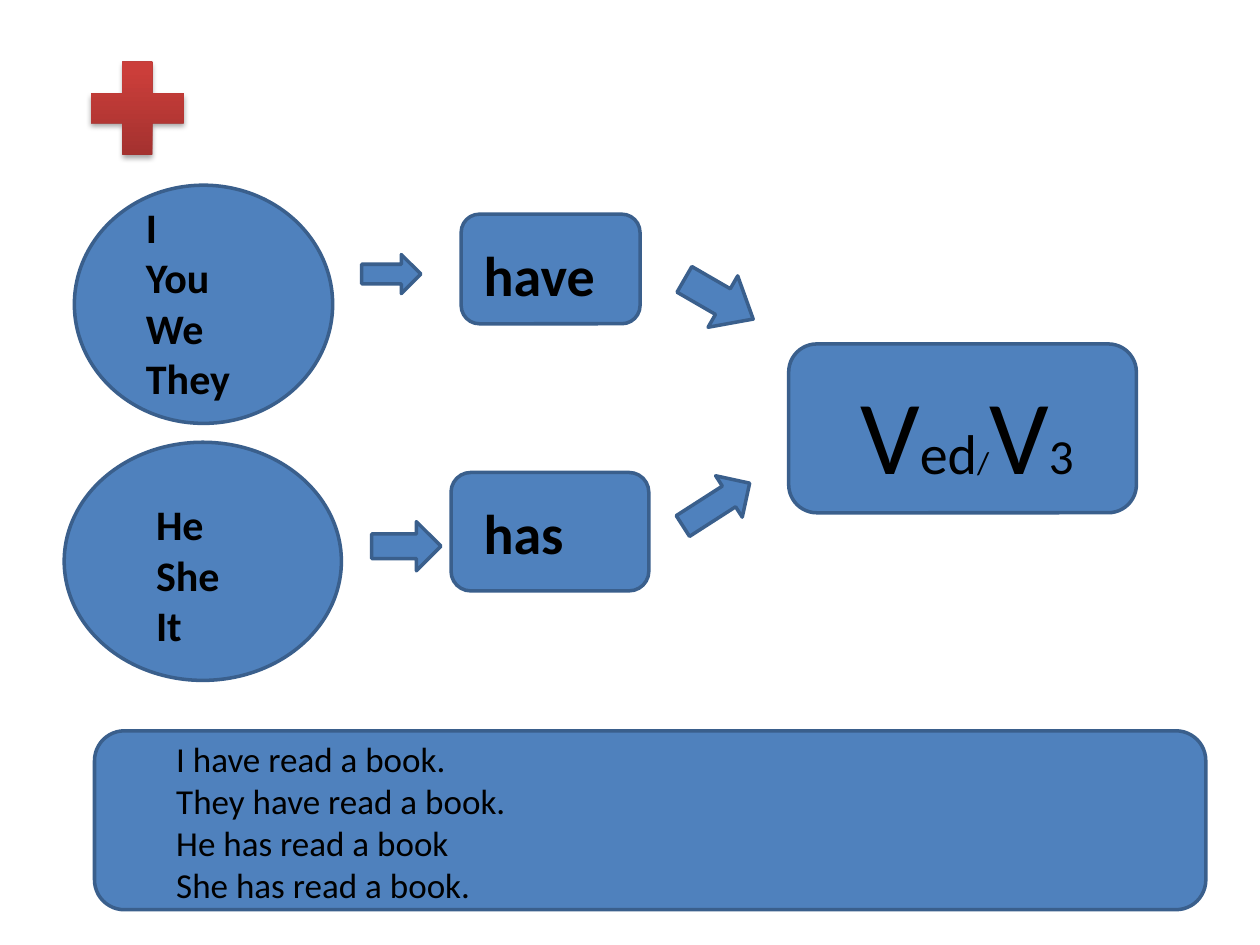
"""Build a slide that shows how the present perfect is formed."""
from dataclasses import dataclass

from lxml import etree
from pptx import Presentation
from pptx.dml.color import RGBColor
from pptx.enum.shapes import MSO_SHAPE
from pptx.util import Inches, Pt

PLUS = MSO_SHAPE.MATH_PLUS
OVAL = MSO_SHAPE.OVAL
ARROW = MSO_SHAPE.RIGHT_ARROW
ROUND = MSO_SHAPE.ROUNDED_RECTANGLE

BLUE = RGBColor(0x4F, 0x81, 0xBD)
DARK_BLUE = RGBColor(0x3A, 0x5F, 0x8C)
BLACK = RGBColor(0, 0, 0)
FONT = "Calibri"

NS = 'xmlns:a="http://schemas.openxmlformats.org/drawingml/2006/main"'
RED_GRADIENT = f"""<a:gradFill {NS} rotWithShape="1"><a:gsLst>
<a:gs pos="0"><a:srgbClr val="9C2F2D"/></a:gs>
<a:gs pos="80000"><a:srgbClr val="CB3E3A"/></a:gs>
<a:gs pos="100000"><a:srgbClr val="CE3B37"/></a:gs>
</a:gsLst><a:lin ang="16200000" scaled="0"/></a:gradFill>"""
SOFT_SHADOW = f"""<a:effectLst {NS}>
<a:outerShdw blurRad="40000" dist="23000" dir="5400000" rotWithShape="0">
<a:srgbClr val="000000"><a:alpha val="35000"/></a:srgbClr>
</a:outerShdw></a:effectLst>"""


@dataclass
class Block:
    kind: MSO_SHAPE
    box: tuple[float, float, float, float]
    rotation: float = 0
    adjustments: tuple[float, ...] = ()


@dataclass
class Label:
    box: tuple[float, float, float, float]
    lines: list[str]
    size: int
    bold: bool = False


BLOCKS = [
    Block(OVAL, (0.59, 1.47, 2.05, 1.89)),
    Block(OVAL, (0.51, 3.51, 2.2, 1.89)),
    Block(ARROW, (2.87, 2.02, 0.47, 0.31)),
    Block(ARROW, (2.95, 4.14, 0.55, 0.39)),
    Block(ROUND, (3.66, 1.7, 1.42, 0.87)),
    Block(ROUND, (3.58, 3.75, 1.57, 0.94)),
    Block(ARROW, (5.39, 2.14, 0.63, 0.47), 30, (0.5, 0.59)),
    Block(ARROW, (5.37, 3.81, 0.63, 0.39), 327.3),
    Block(ROUND, (6.26, 2.73, 2.76, 1.34)),
    Block(ROUND, (0.75, 5.8, 8.82, 1.42)),
]
LABELS = [
    Label((1.06, 1.55, 1.18, 1.72), ["I", "You", "We", "They"], 24, True),
    Label((1.14, 3.91, 1.1, 1.31), ["He", "She", "It"], 24, True),
    Label((3.74, 1.86, 1.1, 0.64), ["have"], 32, True),
    Label((3.74, 3.91, 1.1, 0.64), ["has"], 32, True),
    Label((1.3, 5.8, 7.09, 1.45),
          ["I have read a book.", "They have read a book.",
           "He has read a book", "She has read a book."], 20),
]
FORMULA_BOX = (6.73, 2.88, 2.2, 1.11)
FORMULA = [("V", 60), ("ed", 32), ("/", 18), ("V", 60), ("3", 28), (" ", 18)]


def add_plus(s) -> None:
    sp = s.shapes.add_shape(PLUS, *map(Inches, (0.59, 0.36, 1, 1)))
    sp.line.fill.background()
    pr = sp._element.spPr
    pr.insert(2, etree.fromstring(RED_GRADIENT))
    pr.append(etree.fromstring(SOFT_SHADOW))


def add_block(s, block: Block) -> None:
    sp = s.shapes.add_shape(block.kind, *map(Inches, block.box))
    sp.shadow.inherit = False
    sp.rotation = block.rotation
    for i, value in enumerate(block.adjustments):
        sp.adjustments[i] = value
    sp.fill.solid()
    sp.fill.fore_color.rgb = BLUE
    sp.line.color.rgb = DARK_BLUE
    sp.line.width = Pt(2)


def add_text(s, box: tuple[float, ...], lines: list[list[tuple[str, int]]],
             *, bold: bool = False) -> None:
    tf = s.shapes.add_textbox(*map(Inches, box)).text_frame
    tf.word_wrap = True
    for i, runs in enumerate(lines):
        p = tf.add_paragraph() if i else tf.paragraphs[0]
        for text, size in runs:
            r = p.add_run()
            r.text = text
            r.font.name = FONT
            r.font.size = Pt(size)
            r.font.bold = bold
            r.font.color.rgb = BLACK


def main() -> None:
    prs = Presentation()
    prs.slide_width, prs.slide_height = Inches(10), Inches(7.5)
    s = prs.slides.add_slide(prs.slide_layouts[6])
    add_plus(s)
    for block in BLOCKS:
        add_block(s, block)
    for label in LABELS:
        lines = [[(line, label.size)] for line in label.lines]
        add_text(s, label.box, lines, bold=label.bold)
    add_text(s, FORMULA_BOX, [FORMULA])
    prs.save("out.pptx")


if __name__ == "__main__":
    main()
